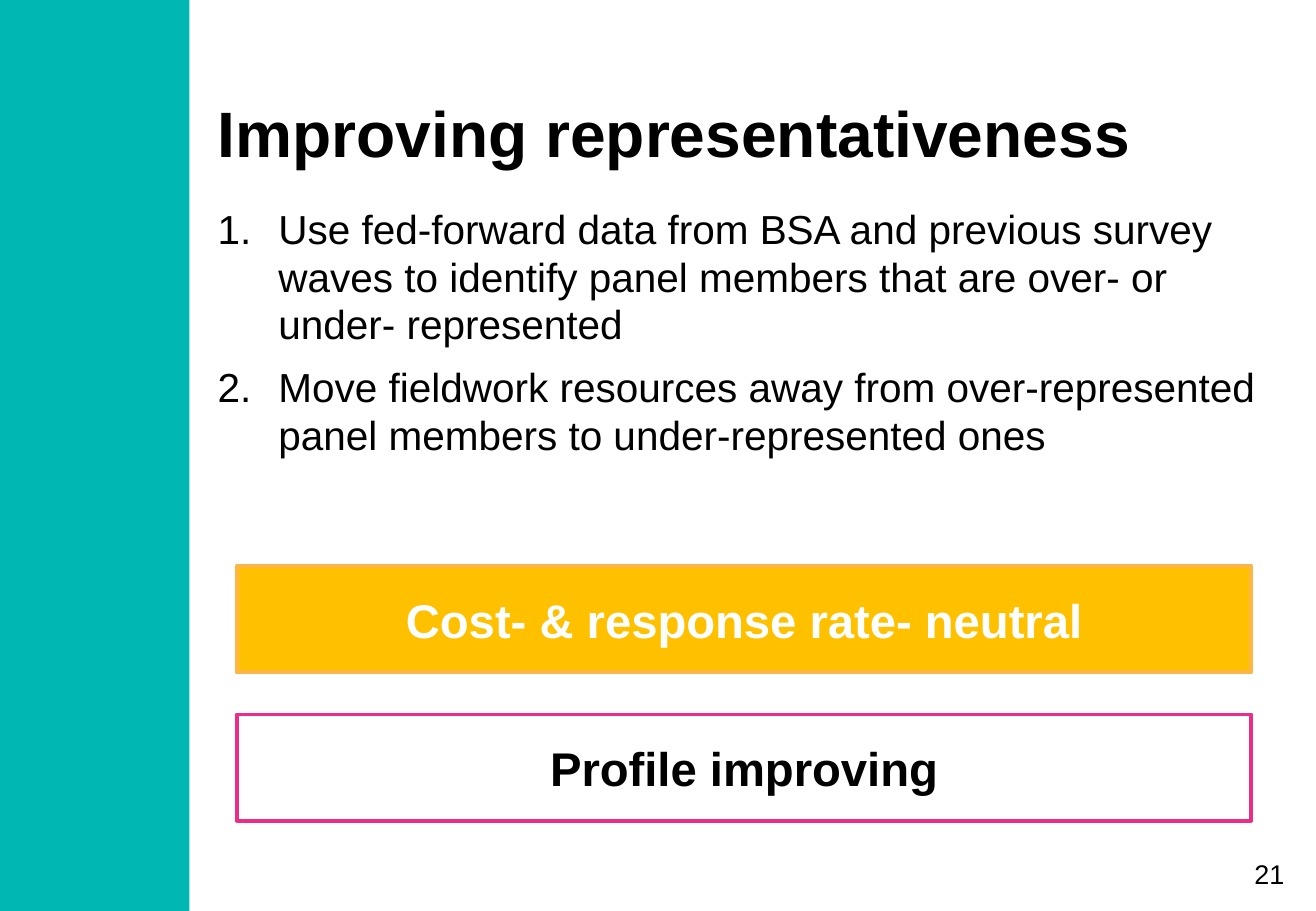
from dataclasses import dataclass, field
from typing import Any, Optional

import pptx
import pptx.dml.color
import pptx.enum.shapes
import pptx.enum.text
import pptx.oxml
import pptx.oxml.ns
import pptx.util

Pt = pptx.util.Pt
Align = pptx.enum.text.PP_ALIGN
Anchor = pptx.enum.text.MSO_ANCHOR


@dataclass(frozen=True)
class Theme:
    face: str = "Arial"
    teal: str = "00B7B4"
    gold: str = "FFC000"
    amber: str = "FCB645"
    pink: str = "ED2C88"
    white: str = "FFFFFF"
    black: str = "000000"
    head: float = 38
    label: float = 28
    body: float = 24
    page: float = 16


THEME = Theme()


@dataclass(frozen=True)
class Box:
    left: float
    top: float
    width: float
    height: float

    def points(self) -> list[pptx.util.Length]:
        return [Pt(n) for n in (self.left, self.top, self.width, self.height)]


@dataclass(frozen=True)
class Copy:
    """Lines of text that share one format."""
    lines: tuple[str, ...]
    size: float
    color: str = THEME.black
    bold: bool = False
    inset: float = 0
    anchor: Any = Anchor.TOP
    para: dict[str, Any] = field(default_factory=dict)
    listed: bool = False


@dataclass(frozen=True)
class Panel:
    box: Box
    fill: str
    line: Optional[str] = None
    copy: Optional[Copy] = None


@dataclass(frozen=True)
class Note:
    box: Box
    copy: Copy


def apply(target: Any, values: dict[str, Any]) -> None:
    for name, value in values.items():
        setattr(target, name, value)


def tint(code: str) -> pptx.dml.color.RGBColor:
    return pptx.dml.color.RGBColor.from_string(code)


def number(para: Any, indent: float) -> None:
    """Give a paragraph a hanging automatic number."""
    props = para._p.get_or_add_pPr()
    props.set("marL", str(Pt(indent)))
    props.set("indent", str(-Pt(indent)))
    mark = pptx.oxml.parse_xml(
        f'<a:buAutoNum {pptx.oxml.ns.nsdecls("a")} type="arabicPeriod"/>')
    props.append(mark)


def write(frame: Any, copy: Copy) -> None:
    sides = ("left", "top", "right", "bottom")
    apply(frame, {f"margin_{side}": Pt(copy.inset) for side in sides})
    apply(frame, {"word_wrap": True, "vertical_anchor": copy.anchor})
    for index, line in enumerate(copy.lines):
        para = frame.add_paragraph() if index else frame.paragraphs[0]
        apply(para, copy.para)
        if copy.listed:
            number(para, 36)
        run = para.add_run()
        run.text = line
        apply(run.font, {"name": THEME.face, "size": Pt(copy.size), "bold": copy.bold})
        run.font.color.rgb = tint(copy.color)


def draw_panel(slide: Any, panel: Panel) -> None:
    kind = pptx.enum.shapes.MSO_SHAPE.RECTANGLE
    shape = slide.shapes.add_shape(kind, *panel.box.points())
    shape.shadow.inherit = False
    shape.fill.solid()
    shape.fill.fore_color.rgb = tint(panel.fill)
    if panel.line:
        shape.line.color.rgb = tint(panel.line)
        shape.line.width = Pt(2.25)
    else:
        shape.line.fill.background()
    if panel.copy:
        write(shape.text_frame, panel.copy)


def draw_note(slide: Any, note: Note) -> None:
    write(slide.shapes.add_textbox(*note.box.points()).text_frame, note.copy)


def label(text: str, color: str) -> Copy:
    return Copy((text,), THEME.label, color, bold=True, inset=6,
                anchor=Anchor.MIDDLE, para={"alignment": Align.CENTER})


PANELS = (
    Panel(Box(0, 0, 112.3, 540), THEME.teal),
    Panel(Box(140.4, 335.5, 601.2, 63), THEME.gold, THEME.amber,
          label("Cost- & response rate- neutral", THEME.white)),
    Panel(Box(140.4, 423.5, 601.2, 63), THEME.white, THEME.pink,
          label("Profile improving", THEME.black)),
)

STEPS = (
    "Use fed-forward data from BSA and previous survey waves to identify "
    "panel members that are over- or under- represented",
    "Move fieldwork resources away from over-represented panel members "
    "to under-represented ones",
)

NOTES = (
    Note(Box(129, 36, 589.7, 64.8),
         Copy(("Improving representativeness",), THEME.head, bold=True,
              anchor=Anchor.BOTTOM)),
    Note(Box(129, 122.4, 629.3, 200),
         Copy(STEPS, THEME.body, listed=True,
              para={"line_spacing": 0.98, "space_after": Pt(9)})),
    Note(Box(734.4, 508.3, 36, 19.4),
         Copy(("21",), THEME.page, para={"alignment": Align.CENTER})),
)


def main() -> None:
    deck = pptx.Presentation()
    apply(deck, {"slide_width": Pt(780), "slide_height": Pt(540)})
    slide = deck.slides.add_slide(deck.slide_layouts[6])
    for panel in PANELS:
        draw_panel(slide, panel)
    for note in NOTES:
        draw_note(slide, note)
    deck.save("out.pptx")


if __name__ == "__main__":
    main()
